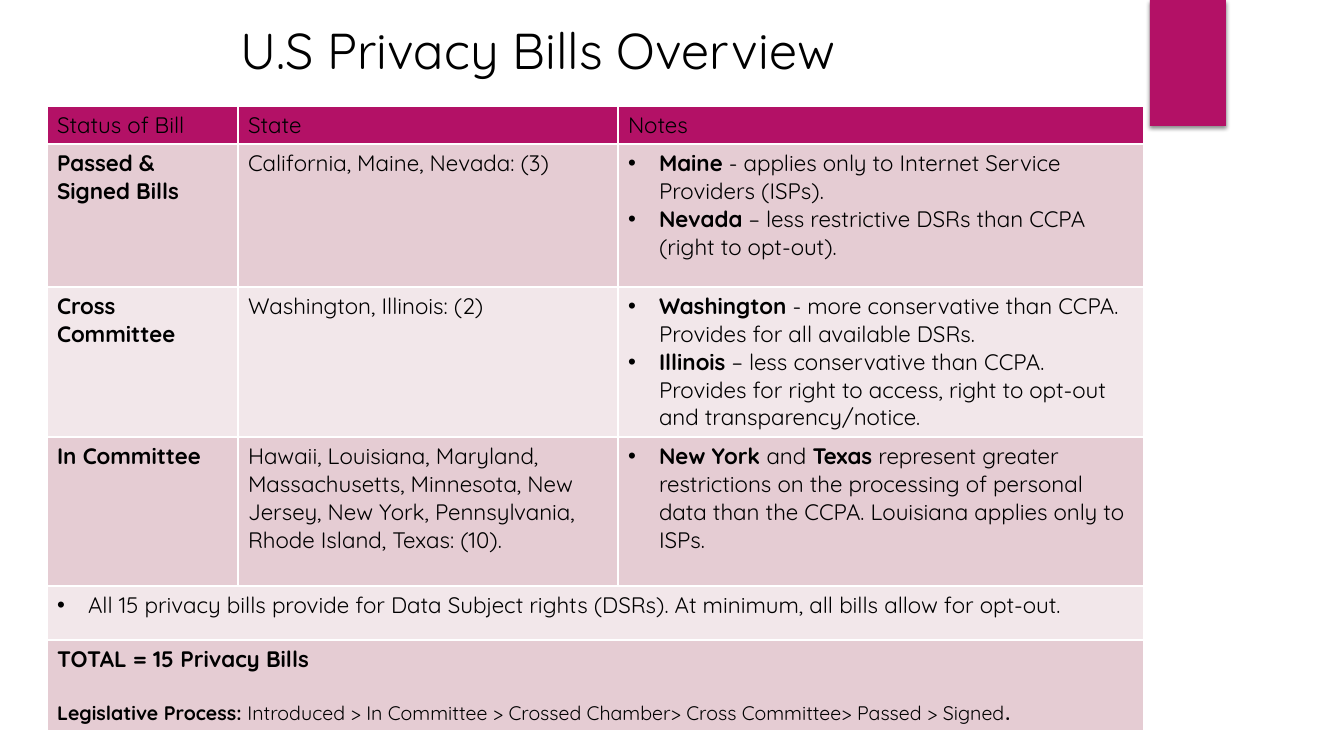
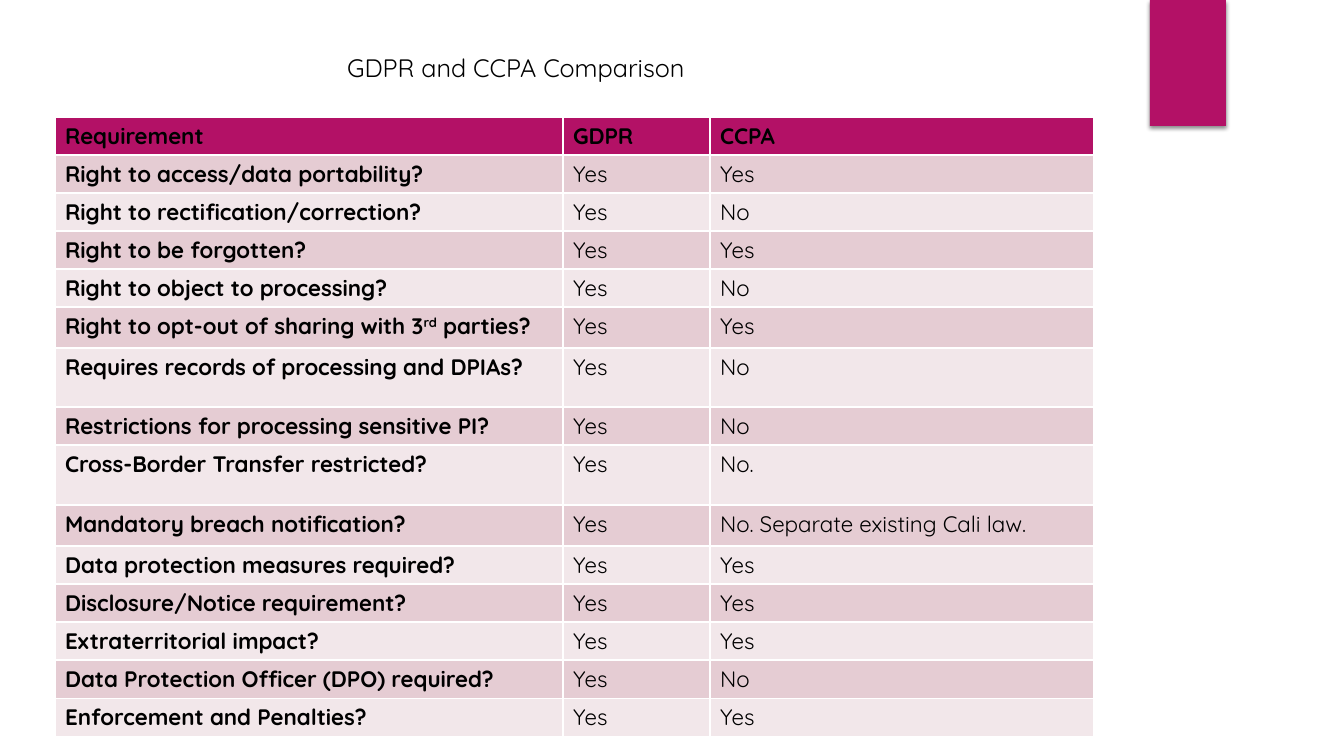
from dataclasses import dataclass

from pptx import Presentation
from pptx.dml.color import RGBColor
from pptx.enum.shapes import MSO_SHAPE
from pptx.enum.text import MSO_ANCHOR, MSO_AUTO_SIZE, PP_ALIGN
from pptx.oxml import parse_xml
from pptx.oxml.ns import nsdecls
from pptx.util import Emu, Pt

RECTANGLE = MSO_SHAPE.RECTANGLE
MIDDLE = MSO_ANCHOR.MIDDLE
FIXED_SIZE = MSO_AUTO_SIZE.NONE
LEFT = PP_ALIGN.LEFT

MAGENTA = RGBColor(0xB3, 0x11, 0x66)
ROSE = RGBColor(0xE5, 0xCC, 0xD3)
PALE_ROSE = RGBColor(0xF2, 0xE7, 0xEA)
WHITE = RGBColor(0xFF, 0xFF, 0xFF)
BLACK = RGBColor(0, 0, 0)

FONT = "Quicksand"
BODY_SIZE = 16
BULLET_INDENT = 31
BORDER_WIDTH = 1
TITLE_ONLY = 5
PX_PER_INCH = 100.8


def px(length):
    return Emu(round(length * 914400 / PX_PER_INCH))


@dataclass
class Span:
    text: str
    bold: bool = False
    raised: bool = False


@dataclass
class Line:
    spans: list
    bullet: bool = False
    size: int = BODY_SIZE
    space_before: int = 0


def plain(text):
    return [Line([Span(text)])]


def strong(text):
    return [Line([Span(text, bold=True)])]


def bullet(*spans):
    return Line(list(spans), bullet=True)


def set_font(font, size, bold=False):
    font.name = FONT
    font.size = Pt(size)
    font.bold = bold
    font.color.rgb = BLACK


def write_line(para, line):
    if line.bullet:
        properties = para._p.get_or_add_pPr()
        properties.set("marL", str(px(BULLET_INDENT)))
        properties.set("indent", str(-px(BULLET_INDENT)))
        properties.append(parse_xml(f'<a:buFont {nsdecls("a")} typeface="Arial"/>'))
        properties.append(parse_xml(f'<a:buChar {nsdecls("a")} char="•"/>'))
    if line.space_before:
        para.space_before = Pt(line.space_before)
    for span in line.spans:
        run = para.add_run()
        run.text = span.text
        set_font(run.font, line.size, span.bold)
        if span.raised:
            run._r.get_or_add_rPr().set("baseline", "30000")


def fill_cell(cell, lines, color):
    cell.fill.solid()
    cell.fill.fore_color.rgb = color
    properties = cell._tc.get_or_add_tcPr()
    for index, side in enumerate(("lnL", "lnR", "lnT", "lnB")):
        properties.insert(index, parse_xml(
            f'<a:{side} {nsdecls("a")} w="{Pt(BORDER_WIDTH)}"><a:solidFill>'
            f'<a:srgbClr val="{WHITE}"/></a:solidFill></a:{side}>'))
    frame = cell.text_frame
    for index, line in enumerate(lines):
        write_line(frame.paragraphs[0] if index == 0 else frame.add_paragraph(), line)


def add_grid(page, left, top, widths, heights, rows):
    """Banded table; a row holding one cell spans every column."""
    table = page.shapes.add_table(len(rows), len(widths), px(left), px(top),
                                  px(sum(widths)), px(sum(heights))).table
    table.first_row = False
    table.horz_banding = False
    for column, width in zip(table.columns, widths):
        column.width = px(width)
    for row, height in zip(table.rows, heights):
        row.height = px(height)
    for index, cells in enumerate(rows):
        color = MAGENTA if index == 0 else ROSE if index % 2 else PALE_ROSE
        if len(cells) == 1:
            table.cell(index, 0).merge(table.cell(index, len(widths) - 1))
        for column, lines in enumerate(cells):
            fill_cell(table.cell(index, column), lines, color)


def add_ribbon(page):
    ribbon = page.shapes.add_shape(RECTANGLE, px(1150), 0, px(76), px(126))
    ribbon.fill.solid()
    ribbon.fill.fore_color.rgb = MAGENTA
    ribbon.line.fill.background()
    ribbon._element.spPr.append(parse_xml(
        f'<a:effectLst {nsdecls("a")}><a:outerShdw blurRad="{Pt(3)}" dist="{Pt(2)}" '
        f'dir="5400000" rotWithShape="0"><a:srgbClr val="{BLACK}">'
        '<a:alpha val="45000"/></a:srgbClr></a:outerShdw></a:effectLst>'))


def add_page(deck, text, box, size, wrap=True):
    """New slide with the shared ribbon and a formatted title."""
    page = deck.slides.add_slide(deck.slide_layouts[TITLE_ONLY])
    add_ribbon(page)
    title = page.shapes.title
    title.left, title.top, title.width, title.height = map(px, box)
    frame = title.text_frame
    frame.text = text
    frame.auto_size = FIXED_SIZE
    frame.word_wrap = wrap
    frame.vertical_anchor = MIDDLE
    para = frame.paragraphs[0]
    para.alignment = LEFT
    set_font(para.runs[0].font, size)
    return page


def build_overview(deck):
    page = add_page(deck, "U.S Privacy Bills Overview", (230, 2, 1114, 95), 36)
    rows = [
        [plain("Status of Bill"), plain("State"), plain("Notes")],
        [strong("Passed & Signed Bills"), plain("California, Maine, Nevada: (3)"), [
            bullet(Span("Maine", True),
                   Span(" - applies only to Internet Service Providers (ISPs).")),
            bullet(Span("Nevada", True),
                   Span(" – less restrictive DSRs than CCPA (right to opt-out)."))]],
        [strong("Cross Committee"), plain("Washington, Illinois: (2)"), [
            bullet(Span("Washington", True),
                   Span(" - more conservative than CCPA. Provides for all available DSRs.")),
            bullet(Span("Illinois", True),
                   Span(" – less conservative than CCPA. Provides for right to access, "
                        "right to opt-out and transparency/notice."))]],
        [strong("In Committee"),
         plain("Hawaii, Louisiana, Maryland, Massachusetts, Minnesota, New Jersey, "
               "New York, Pennsylvania, Rhode Island, Texas: (10)."), [
            bullet(Span("New York ", True), Span("and "), Span("Texas", True),
                   Span(" represent greater restrictions on the processing of personal "
                        "data than the CCPA. Louisiana applies only to ISPs."))]],
        [[bullet(Span("All 15 privacy bills provide for Data Subject rights (DSRs). "
                      "At minimum, all bills allow for opt-out."))]],
        [strong("TOTAL = 15 Privacy Bills") + [
            Line([Span("Legislative Process: ", True),
                  Span("Introduced > In Committee > Crossed Chamber> Cross Committee> "
                       "Passed > Signed"),
                  Span(".", True)], size=14, space_before=20)]],
    ]
    add_grid(page, 47, 106, (191, 380, 526), (37, 143, 150, 149, 54, 90), rows)


def build_comparison(deck):
    page = add_page(deck, "GDPR and CCPA Comparison", (337, 47, 396, 40), 18, wrap=False)
    opt_out = [Line([Span("Right to opt-out of sharing with 3", True),
                     Span("rd", True, raised=True), Span(" parties?", True)])]
    # Requirement, CCPA answer, row height; GDPR answers Yes throughout
    requirements = [
        (strong("Right to access/data portability?"), "Yes", 38),
        (strong("Right to rectification/correction?"), "No", 38),
        (strong("Right to be forgotten?"), "Yes", 38),
        (strong("Right to object to processing?"), "No", 38),
        (opt_out, "Yes", 41),
        (strong("Requires records of processing and DPIAs?"), "No", 59),
        (strong("Restrictions for processing sensitive PI?"), "No", 38),
        (strong("Cross-Border Transfer restricted?"), "No.", 60),
        (strong("Mandatory breach notification?"), "No. Separate existing Cali law.", 41),
        (strong("Data protection measures required?"), "Yes", 38),
        (strong("Disclosure/Notice requirement?"), "Yes", 38),
        (strong("Extraterritorial impact?"), "Yes", 38),
        (strong("Data Protection Officer (DPO) required?"), "No", 38),
        (strong("Enforcement and Penalties?"), "Yes", 38),
    ]
    rows = [[strong("Requirement"), strong("GDPR"), strong("CCPA")]]
    rows += [[name, plain("Yes"), plain(answer)] for name, answer, _ in requirements]
    heights = [37] + [height for _, _, height in requirements]
    add_grid(page, 55, 117, (508, 147, 384), heights, rows)


def main():
    deck = Presentation()
    deck.slide_width, deck.slide_height = px(1344), px(756)
    build_overview(deck)
    build_comparison(deck)
    deck.save("out.pptx")


if __name__ == "__main__":
    main()
